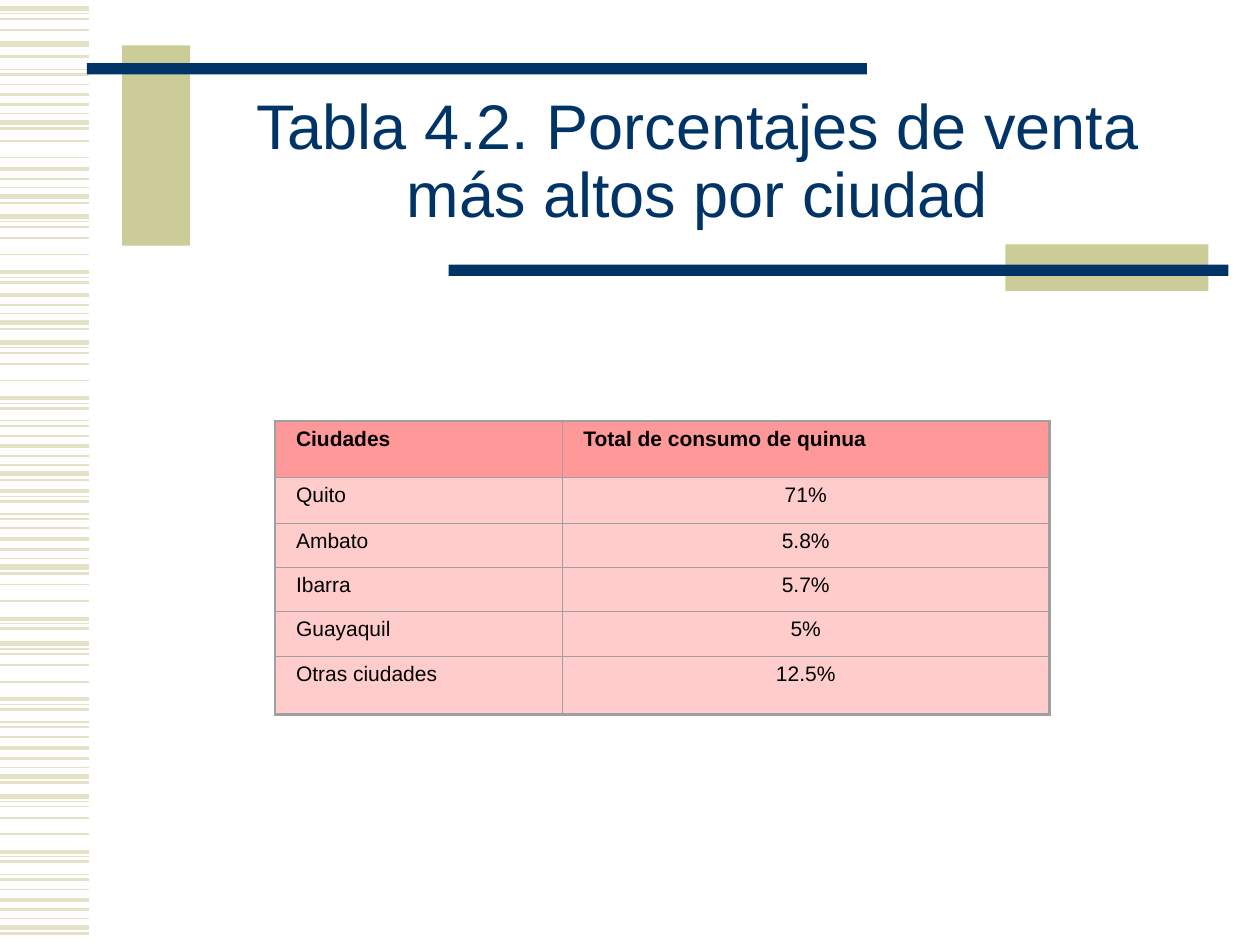
from dataclasses import dataclass

from lxml import etree
from pptx import Presentation
from pptx import util as u
from pptx.dml.color import RGBColor
from pptx.enum import shapes, text
from pptx.oxml import ns

PX = 9144


@dataclass(frozen=True)
class Theme:
    font: str = "Arial"
    navy: str = "003366"
    olive: str = "CCCC99"
    stripe: str = "E3E2C7"
    header: str = "FF9999"
    body: str = "FFCCCC"
    border: str = "A0A0A0"
    ink: str = "000000"
    title_size: int = 36
    cell_size: int = 12
    outer_line: float = 1.5
    inner_line: float = 0.5


T = Theme()

SHORT_RUN = [(0, 2.25), (8, 1.5), (15, 0.75), (22, 3), (27, 1.5)]
LONG_RUN = [(0, 3), (4, 0.75), (8, 1), (17, 1), (30, 1),
            (44, 2.25), (48, 0.75), (52, 1.5), (62, 0.75), (66, 1.5)]
SHORT_STARTS = [75, 134, 234, 354, 428, 594, 714]
LONG_PARTS = [(7, 0, 4), (-7, 7, 10), (172, 0, 8), (272, 0, 10),
              (346, 5, 10), (447, 3, 8), (511, 0, 10), (632, 0, 10)]
SINGLE_STRIPES = [(35, 3), (112, 1), (67, 1), (125, 1),
                  (346, 1), (419, 1), (585, 1), (706, 1)]

ROWS = [
    ("Ciudades", "Total de consumo de quinua"),
    ("Quito", "71%"),
    ("Ambato", "5.8%"),
    ("Ibarra", "5.7%"),
    ("Guayaquil", "5%"),
    ("Otras ciudades", "12.5%"),
]
COL_WIDTHS = [228, 387]
ROW_HEIGHTS = [45, 36, 35, 35, 36, 46]


def px(*values):
    return [u.Emu(v * PX) for v in values]


def rgb(color):
    return RGBColor.from_string(color)


def style_text(p, size, color, align, bold=False):
    p.alignment = align
    p.font.name = T.font
    p.font.size = u.Pt(size)
    p.font.bold = bold
    p.font.color.rgb = rgb(color)


def add_stripe(s, y, weight):
    line = s.shapes.add_connector(shapes.MSO_CONNECTOR.STRAIGHT, *px(0, y, 71, y))
    line.line.color.rgb = rgb(T.stripe)
    line.line.width = u.Pt(weight)
    etree.SubElement(line._element.spPr, ns.qn("a:effectLst"))


def add_stripes(s):
    stripes = list(SINGLE_STRIPES)
    for start in SHORT_STARTS:
        stripes += [(start + y, weight) for y, weight in SHORT_RUN]
    for start, first, last in LONG_PARTS:
        stripes += [(start + y, weight) for y, weight in LONG_RUN[first:last]]
    for y, weight in sorted(stripes):
        add_stripe(s, y, weight)


def add_bar(s, box, color):
    sp = s.shapes.add_shape(shapes.MSO_SHAPE.RECTANGLE, *px(*box))
    sp.shadow.inherit = False
    sp.fill.solid()
    sp.fill.fore_color.rgb = rgb(color)
    sp.line.fill.background()


def set_title(s, words, box):
    sp = s.shapes.title
    sp.left, sp.top, sp.width, sp.height = px(*box)
    tf = sp.text_frame
    tf.text = words
    tf.word_wrap = True
    tf.auto_size = text.MSO_AUTO_SIZE.NONE
    tf.vertical_anchor = text.MSO_ANCHOR.MIDDLE
    p = tf.paragraphs[0]
    p.line_spacing = 0.9
    style_text(p, T.title_size, T.navy, text.PP_ALIGN.CENTER)


def set_borders(cell, outer):
    tc_pr = cell._tc.get_or_add_tcPr()
    for side, is_outer in zip("LRTB", outer):
        width = u.Pt(T.outer_line if is_outer else T.inner_line)
        ln = etree.SubElement(tc_pr, ns.qn(f"a:ln{side}"), w=str(int(width)))
        fill = etree.SubElement(ln, ns.qn("a:solidFill"))
        etree.SubElement(fill, ns.qn("a:srgbClr"), val=T.border)


def set_cell(cell, words, fill, align, bold, outer):
    set_borders(cell, outer)
    cell.fill.solid()
    cell.fill.fore_color.rgb = rgb(fill)
    cell.margin_left, cell.margin_right, cell.margin_top, cell.margin_bottom = px(17, 17, 5, 5)
    cell.vertical_anchor = text.MSO_ANCHOR.TOP
    cell.text = words
    style_text(cell.text_frame.paragraphs[0], T.cell_size, T.ink, align, bold)


def add_sales_table(s, left, top):
    n_rows, n_cols = len(ROWS), len(COL_WIDTHS)
    box = px(left, top, sum(COL_WIDTHS), sum(ROW_HEIGHTS))
    table = s.shapes.add_table(n_rows, n_cols, *box).table
    for column, width in zip(table.columns, px(*COL_WIDTHS)):
        column.width = width
    for row, height in zip(table.rows, px(*ROW_HEIGHTS)):
        row.height = height
    for i, values in enumerate(ROWS):
        is_header = i == 0
        for j, words in enumerate(values):
            centred = j > 0 and not is_header
            set_cell(
                table.cell(i, j), words,
                T.header if is_header else T.body,
                text.PP_ALIGN.CENTER if centred else text.PP_ALIGN.JUSTIFY,
                is_header,
                (j == 0, j == n_cols - 1, is_header, i == n_rows - 1),
            )


def main():
    prs = Presentation()
    prs.slide_width, prs.slide_height = px(1000, 750)
    s = prs.slides.add_slide(prs.slide_layouts[5])
    add_stripes(s)
    add_bar(s, (97, 36, 54, 159), T.olive)
    add_bar(s, (69, 50, 619, 9), T.navy)
    add_bar(s, (798, 194, 161, 37), T.olive)
    add_bar(s, (356, 210, 619, 9), T.navy)
    set_title(s, "Tabla 4.2. Porcentajes de venta más altos por ciudad", (150, 67, 807, 125))
    add_sales_table(s, 218, 334)
    prs.save("out.pptx")


if __name__ == "__main__":
    main()
